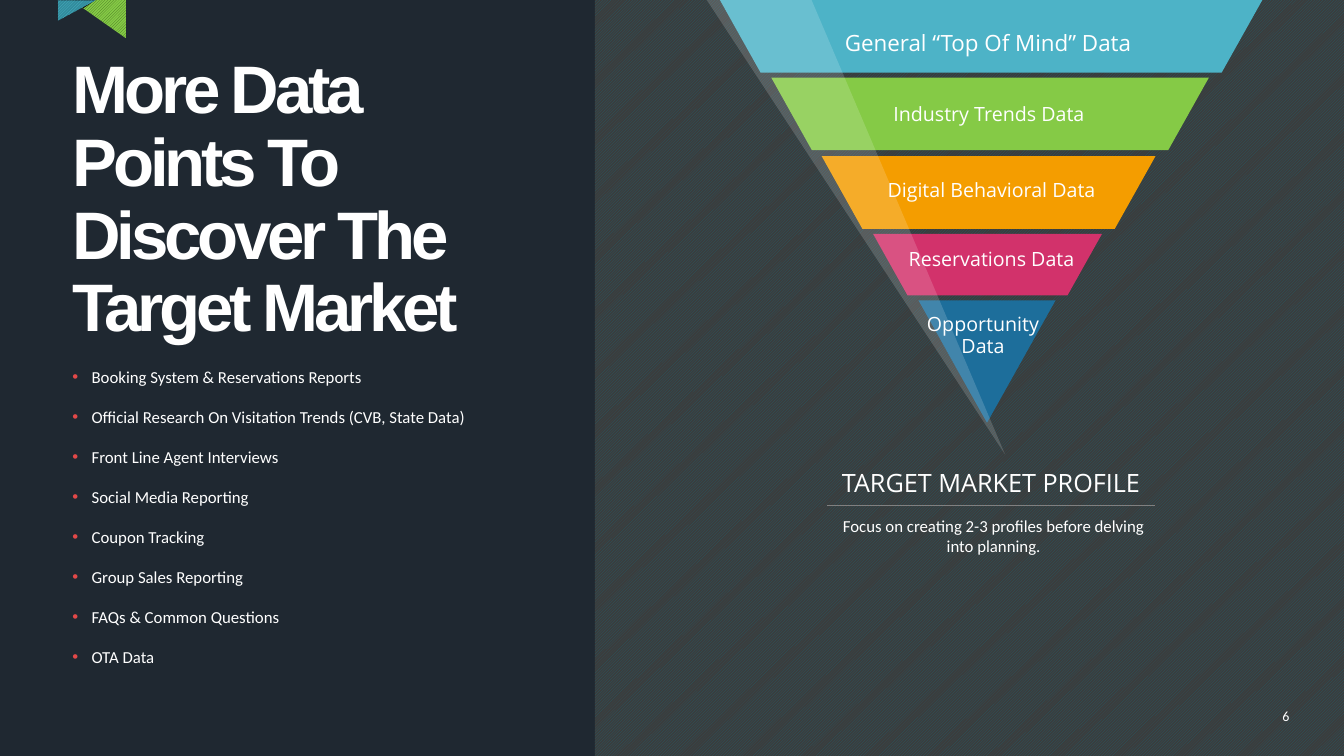
from dataclasses import dataclass
from typing import NamedTuple

from pptx import Presentation, util as u
from pptx.dml.color import RGBColor
from pptx.enum import dml, shapes, text
from pptx.oxml.ns import qn
from lxml import etree


@dataclass(frozen=True)
class Theme:
    back: str = "1F2831"
    white: str = "FFFFFF"
    teal: str = "4DB3C7"
    green: str = "85CA46"
    orange: str = "F49D00"
    pink: str = "D2326B"
    blue: str = "1D6E9B"
    bullet: str = "E24848"
    rule: str = "808080"
    fold: str = "131313"
    head: str = "Arial"
    body: str = "Calibri"
    label: str = "Open Sans"
    title: int = 48
    profile: int = 18
    top: int = 16
    band: int = 14
    small: int = 12
    page: int = 10


class Box(NamedTuple):
    left: float
    top: float
    width: float
    height: float


class Band(NamedTuple):
    box: Box
    color: str
    words: str
    label: Box
    size: int


class Flag(NamedTuple):
    box: Box
    turn: int
    fore: str
    back: str


T = Theme()
SLOPE = 0.56  # horizontal inset of a funnel side per inch of height

BANDS = [
    Band(Box(7.14, 0, 5.38, 0.72), T.teal, "General “Top Of Mind” Data",
         Box(8.27, 0.23, 3.06, 0.41), T.top),
    Band(Box(7.65, 0.77, 4.34, 0.72), T.green, "Industry Trends Data",
         Box(8.08, 0.94, 3.46, 0.41), T.band),
    Band(Box(8.15, 1.55, 3.31, 0.72), T.orange, "Digital Behavioral Data",
         Box(8.54, 1.69, 2.59, 0.41), T.band),
    Band(Box(8.66, 2.32, 2.27, 0.61), T.pink, "Reservations Data",
         Box(8.54, 2.38, 2.59, 0.41), T.band),
    Band(Box(9.11, 2.98, 1.36, 1.21), T.blue, "Opportunity Data",
         Box(9.07, 3.1, 1.36, 0.47), T.band),
]
GREEN_FLAG = Flag(Box(0.71, 0, 0.54, 0.38), 180, "426A1E", T.green)
BLUE_FLAG = Flag(Box(0.66, -0.08, 0.2, 0.37), 90, T.teal, "328C9D")
SOURCES = [
    "Booking System & Reservations Reports",
    "Official Research On Visitation Trends (CVB, State Data)",
    "Front Line Agent Interviews",
    "Social Media Reporting",
    "Coupon Tracking",
    "Group Sales Reporting",
    "FAQs & Common Questions",
    "OTA Data",
]


def rgb(color: str) -> RGBColor:
    return RGBColor.from_string(color)


def place(box: Box) -> list:
    return [u.Inches(side) for side in box]


def hatch(shape, fore: str, back: str) -> None:
    """Fill a shape with fine upward diagonals."""
    shape.shadow.inherit = False
    shape.line.fill.background()
    shape.fill.patterned()
    shape.fill.pattern = dml.MSO_PATTERN.LIGHT_UPWARD_DIAGONAL
    shape.fill.fore_color.rgb = rgb(fore)
    shape.fill.back_color.rgb = rgb(back)


def outline(slide, points: list, color: str, alpha: int = 100) -> None:
    """Draw a closed, filled polygon."""
    spots = [(u.Inches(x), u.Inches(y)) for x, y in points]
    pen = slide.shapes.build_freeform(*spots[0])
    pen.add_line_segments(spots[1:], close=True)
    shape = pen.convert_to_shape()
    shape.shadow.inherit = False
    shape.line.fill.background()
    shape.fill.solid()
    shape.fill.fore_color.rgb = rgb(color)
    if alpha < 100:
        tint = shape.fill._xPr.find(".//" + qn("a:srgbClr"))
        etree.SubElement(tint, qn("a:alpha")).set("val", str(alpha * 1000))


def write(shape, words: str, *, size: int, font: str = T.body,
          align=text.PP_ALIGN.CENTER, anchor=text.MSO_ANCHOR.MIDDLE,
          leading: float = 1.0, after: float = 0, bold: bool = False,
          track: int = 0, bullet: str = "") -> None:
    """Put text in a shape, one paragraph per line."""
    frame = shape.text_frame
    frame.word_wrap = True
    frame.auto_size = text.MSO_AUTO_SIZE.NONE
    frame.vertical_anchor = anchor
    frame.text = words
    for para in frame.paragraphs:
        para.alignment = align
        para.line_spacing = leading
        para.space_before = u.Pt(0)
        para.space_after = u.Pt(after)
        run = para.runs[0]
        run.font.size = u.Pt(size)
        run.font.name = font
        run.font.bold = bold
        run.font.color.rgb = rgb(T.white)
        if track:
            run._r.get_or_add_rPr().set("spc", str(track * 100))
        if bullet:
            props = para._p.get_or_add_pPr()
            props.set("marL", str(u.Inches(0.19)))
            props.set("indent", str(u.Inches(-0.19)))
            tint = etree.SubElement(props, qn("a:buClr"))
            etree.SubElement(tint, qn("a:srgbClr")).set("val", bullet)
            etree.SubElement(props, qn("a:buFont")).set("typeface", "Arial")
            etree.SubElement(props, qn("a:buChar")).set("char", "•")


def note(slide, box: Box, words: str, **style) -> None:
    write(slide.shapes.add_textbox(*place(box)), words, **style)


def draw_flag(slide, flag: Flag) -> None:
    kind = shapes.MSO_SHAPE.ISOSCELES_TRIANGLE
    shape = slide.shapes.add_shape(kind, *place(flag.box))
    shape.adjustments[0] = 0
    shape.rotation = flag.turn
    hatch(shape, flag.fore, flag.back)


def draw_band(slide, band: Band) -> None:
    left, top, width, height = band.box
    inset = min(SLOPE * height, width / 2)
    right, base = left + width, top + height
    outline(slide, [(left, top), (right, top), (right - inset, base),
                    (left + inset, base)], band.color)


def draw_rule(slide, left: float, right: float, y: float) -> None:
    line = slide.shapes.add_connector(
        shapes.MSO_CONNECTOR.STRAIGHT,
        *place(Box(left, y, right, y)))
    line.line.color.rgb = rgb(T.rule)
    line.line.width = u.Pt(0.5)
    etree.SubElement(line._element.spPr, qn("a:effectLst"))


def main() -> None:
    deck = Presentation()
    deck.slide_width, deck.slide_height = u.Inches(13.33), u.Inches(7.5)
    slide = deck.slides.add_slide(deck.slide_layouts[5])
    slide.background.fill.solid()
    slide.background.fill.fore_color.rgb = rgb(T.back)

    # Corner ribbon
    draw_flag(slide, GREEN_FLAG)
    outline(slide, [(0.71, 0), (0.95, 0), (0.83, 0.08)], T.fold)
    draw_flag(slide, BLUE_FLAG)

    # Right panel and page number
    panel = slide.shapes.add_shape(
        shapes.MSO_SHAPE.RECTANGLE, *place(Box(5.9, 0, 7.43, 7.5)))
    hatch(panel, "215D69", "3C3C3C")
    note(slide, Box(12.52, 6.97, 0.47, 0.27), "6", size=T.page)

    # Title and list of data sources
    title = slide.shapes.title
    title.left, title.top, title.width, title.height = place(
        Box(0.62, 1.01, 4.74, 1.97))
    write(title, "More Data Points To Discover The Target Market",
          size=T.title, font=T.head, align=text.PP_ALIGN.LEFT,
          leading=0.9, bold=True, track=-3)
    note(slide, Box(0.62, 3.59, 4.51, 3.13), "\n".join(SOURCES),
         size=T.small, align=text.PP_ALIGN.LEFT, anchor=text.MSO_ANCHOR.TOP,
         after=14.2, bullet=T.bullet)

    # Funnel: bands, light beam, labels
    for band in BANDS:
        draw_band(slide, band)
    outline(slide, [(7.01, 0), (9.97, 4.51), (8.05, 0)], T.white, alpha=16)
    for band in BANDS:
        note(slide, band.label, band.words, size=band.size, font=T.label,
             leading=0.9)

    # Target profile
    draw_rule(slide, 8.2, 11.46, 5.01)
    note(slide, Box(8.2, 4.6, 3.26, 0.41), "TARGET MARKET PROFILE",
         size=T.profile, font=T.label, leading=0.9)
    note(slide, Box(8.26, 5.07, 3.19, 0.51),
         "Focus on creating 2-3 profiles before delving into planning.",
         size=T.small, anchor=text.MSO_ANCHOR.TOP)

    deck.save("out.pptx")


if __name__ == "__main__":
    main()
